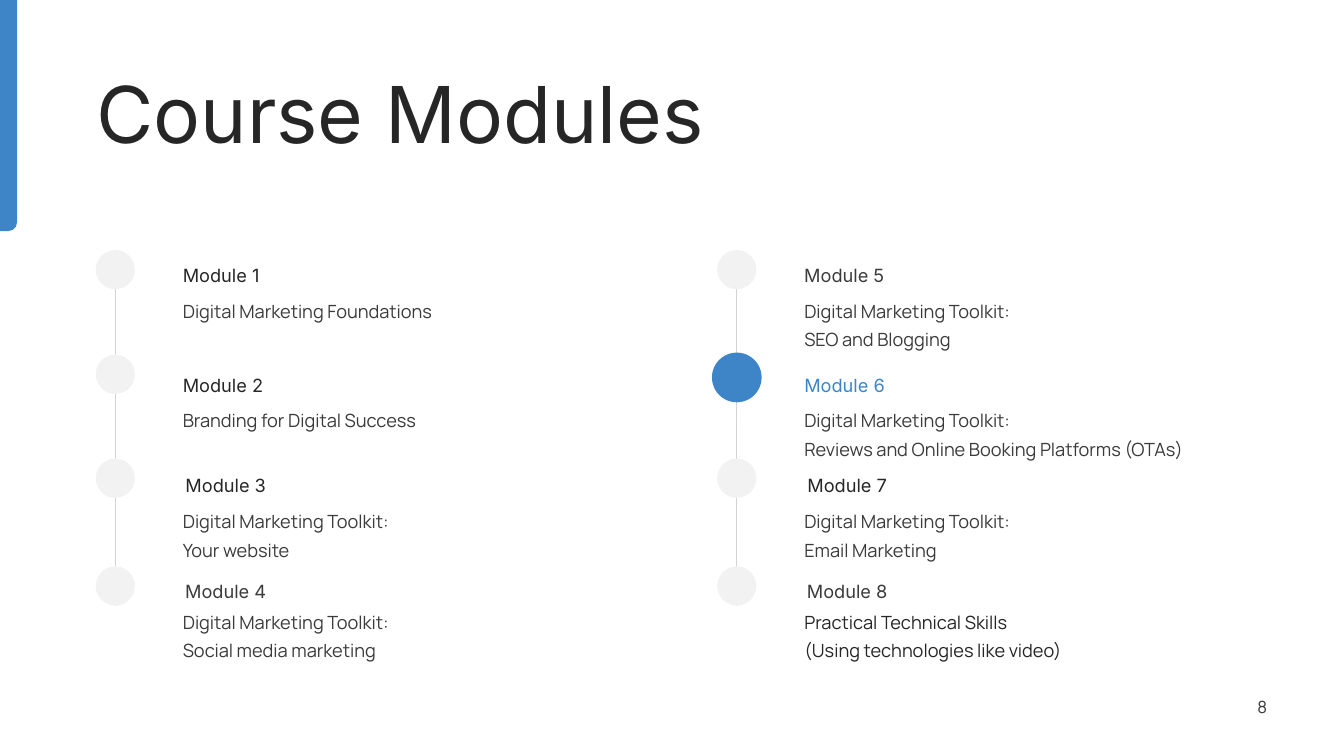
from copy import deepcopy

from lxml import etree
from pptx import Presentation
from pptx.enum import shapes, text
from pptx.oxml import ns
from pptx.dml.color import RGBColor
from pptx.util import Pt

COLORS = {
    "blue": "3D85C6",
    "dark": "262627",
    "body": "3B3B3C",
    "dot": "F2F2F2",
    "rail": "D3D3D3",
}
DOT = 28
ACTIVE_DOT = 35.5

# Rows, measured from the top of a column: dot, heading, description
DOT_TOPS = (0, 74.8, 149, 226)
HEADING_TOPS = (5.7, 84.2, 155.5, 231.1)
BODY_TOPS = (31, 109.4, 181.4, 253.4)
HEADING_WIDTHS = (88, 73.5, 61.2, 61.2)
HEADING_ALIGNS = ("LEFT", "LEFT", "CENTER", "CENTER")

# Heading, heading colour, description, description colour, description width
LEFT_MODULES = [
    ("Module 1", "dark", "Digital Marketing Foundations", "body", 214),
    ("Module 2", "dark", "Branding for Digital Success", "body", 295),
    ("Module 3", "dark", "Digital Marketing Toolkit: Your website", "body", 165),
    ("Module 4", "body", "Digital Marketing Toolkit:\nSocial media marketing", "body", 165),
]
RIGHT_MODULES = [
    ("Module 5", "body", "Digital Marketing Toolkit:\nSEO and Blogging", "body", 214),
    ("Module 6", "blue",
     "Digital Marketing Toolkit:\nReviews and Online Booking Platforms (OTAs)", "body", 295),
    ("Module 7", "dark", "Digital Marketing Toolkit: Email Marketing", "body", 165),
    ("Module 8", "body",
     "Practical Technical Skills\n(Using technologies like video)", "dark", 203),
]


def rgb(name):
    return RGBColor.from_string(COLORS[name])


def add_text(page, words, left, top, width, height, *, size=13, font="Manrope",
             color="body", align="LEFT", spacing=1.3, anchor="TOP", grow=True):
    box = page.shapes.add_textbox(Pt(left), Pt(top), Pt(width), Pt(height))
    frame = box.text_frame
    frame.margin_left = frame.margin_right = 0
    frame.margin_top = frame.margin_bottom = 0
    frame.word_wrap = True
    frame.vertical_anchor = text.MSO_ANCHOR[anchor]
    if grow:
        frame.auto_size = text.MSO_AUTO_SIZE.SHAPE_TO_FIT_TEXT
    para = frame.paragraphs[0]
    para.text = words
    para.alignment = text.PP_ALIGN[align]
    para.line_spacing = spacing
    for span in para.runs:
        span.font.size = Pt(size)
        span.font.name = font
        span.font.color.rgb = rgb(color)
    # Line breaks take the size of the text around them
    for line_break in para._p.findall(ns.qn("a:br")):
        line_break.append(deepcopy(para.runs[0]._r.rPr))


def add_filled(page, kind, left, top, width, height, color):
    shape = page.shapes.add_shape(kind, Pt(left), Pt(top), Pt(width), Pt(height))
    shape.shadow.inherit = False
    shape.fill.solid()
    shape.fill.fore_color.rgb = rgb(color)
    shape.line.fill.background()
    return shape


def add_rail(page, x, top, bottom):
    rail = page.shapes.add_connector(
        shapes.MSO_CONNECTOR.STRAIGHT, Pt(x), Pt(top), Pt(x), Pt(bottom))
    rail.line.color.rgb = rgb("rail")
    rail.line.width = Pt(0.75)
    etree.SubElement(rail._element.spPr, ns.qn("a:effectLst"))


def add_header(page, left, top, width, height):
    # Accent bar, rounded at its lower right corner
    bar = add_filled(page, shapes.MSO_SHAPE.ROUND_1_RECTANGLE, 0, 0, 12.2, 165, "blue")
    bar.adjustments[0] = 0.5
    bar.rotation = 180
    bar._element.spPr.xfrm.set("flipH", "1")
    # Title
    add_text(page, "Course Modules", left, top, width, height, size=56,
             font="Inter", color="dark", spacing=0.9, grow=False)


def add_module_column(page, left, top, modules, active=None):
    center = left + DOT / 2
    text_left = left + 62.2
    add_rail(page, center, top + DOT / 2, top + DOT_TOPS[-1] + DOT)
    for row, (heading, heading_color, body, body_color, body_width) in enumerate(modules):
        # Timeline dot
        if row == active:
            size, color, dot_top = ACTIVE_DOT, "blue", top + DOT_TOPS[row] - 1.5
        else:
            size, color, dot_top = DOT, "dot", top + DOT_TOPS[row]
        add_filled(page, shapes.MSO_SHAPE.OVAL, center - size / 2, dot_top,
                   size, size, color)
        # Heading and description
        add_text(page, heading, text_left, top + HEADING_TOPS[row],
                 HEADING_WIDTHS[row], 16, font="Inter", color=heading_color,
                 align=HEADING_ALIGNS[row])
        body_height = 36 if "Toolkit" in body or "\n" in body else 16
        add_text(page, body, text_left, top + BODY_TOPS[row], body_width,
                 body_height, color=body_color)


def add_page_number(page, left, top, width, height):
    add_text(page, "8", left, top, width, height, size=12, align="RIGHT",
             spacing=1.0, anchor="MIDDLE", grow=False)


def main():
    deck = Presentation()
    deck.slide_width, deck.slide_height = Pt(960), Pt(540)
    page = deck.slides.add_slide(deck.slide_layouts[6])
    add_header(page, 69, 54, 837, 64)
    add_module_column(page, 68.4, 178.6, LEFT_MODULES)
    add_module_column(page, 512.3, 178.6, RIGHT_MODULES, active=1)
    add_page_number(page, 870, 490.5, 35, 28.5)
    deck.save("out.pptx")


if __name__ == "__main__":
    main()
